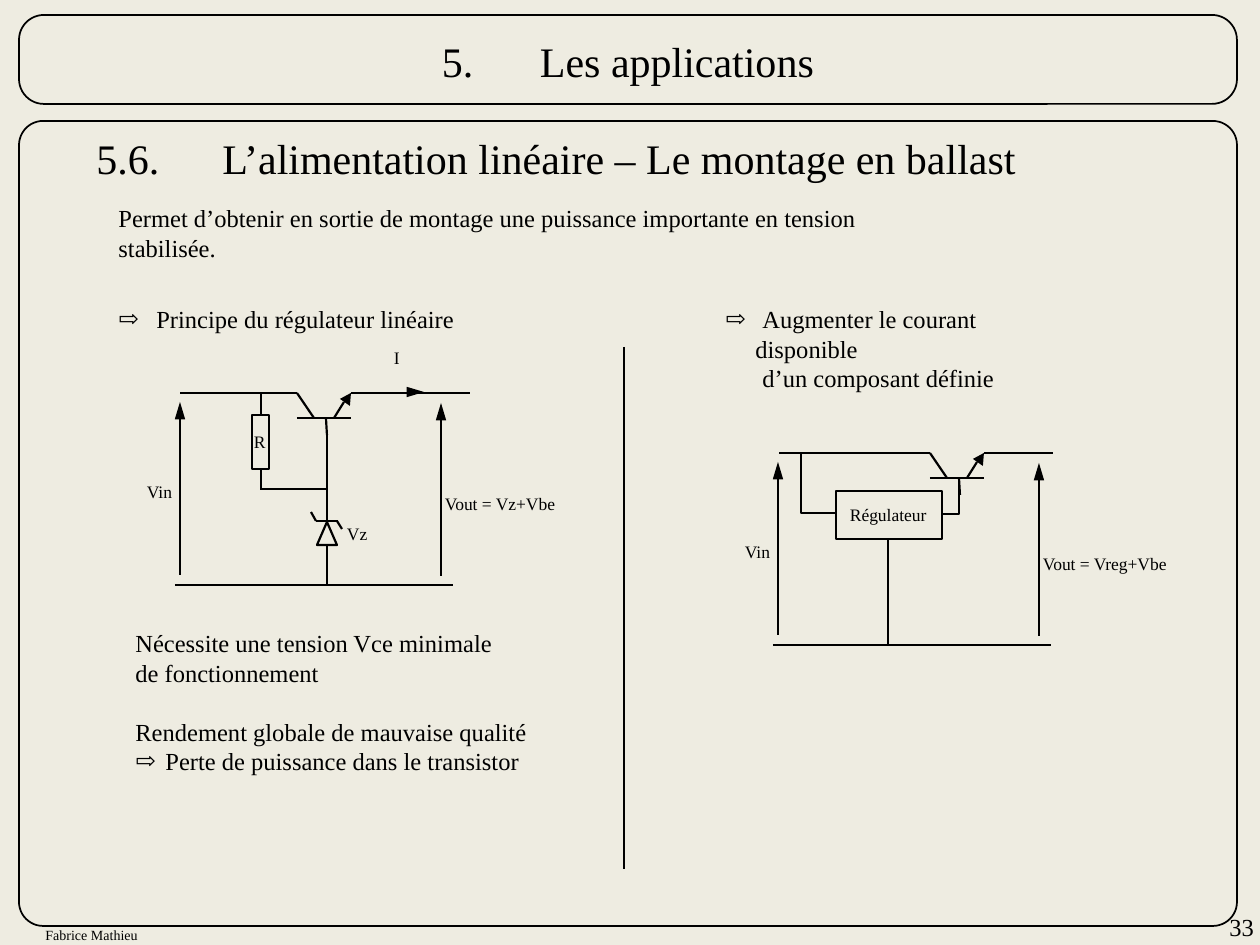
from dataclasses import dataclass

from lxml import etree
from pptx import Presentation
from pptx import util as u
from pptx.dml.color import RGBColor
from pptx.enum import shapes, text
from pptx.oxml.ns import qn


@dataclass(frozen=True)
class Theme:
    paper: RGBColor = RGBColor(0xEE, 0xEC, 0xE1)
    ink: RGBColor = RGBColor(0, 0, 0)
    font: str = "Times New Roman"
    title: int = 24
    body: int = 14
    label: int = 10
    footer: int = 8
    stroke: float = 1.25
    frame: float = 1
    divider: float = 0.75


THEME = Theme()
EMU_PER_PX = 914400 / 126
BULLET = "⇨"


def px(value):
    return u.Emu(round(value * EMU_PER_PX))


def apply(target, values):
    for name, value in values.items():
        setattr(target, name, value)


def style_shape(shape, fill=None, width=THEME.stroke):
    shape.shadow.inherit = False
    if fill is None:
        shape.fill.background()
    else:
        shape.fill.solid()
        shape.fill.fore_color.rgb = fill
    if width:
        shape.line.color.rgb = THEME.ink
        shape.line.width = u.Pt(width)
    else:
        shape.line.fill.background()


def add_box(slide, kind, bounds, fill=None, width=THEME.stroke, corner=None):
    shape = slide.shapes.add_shape(kind, *map(px, bounds))
    style_shape(shape, fill, width)
    if corner is not None:
        shape.adjustments[0] = corner


def add_line(slide, points, width=THEME.stroke, arrow=False):
    connector = slide.shapes.add_connector(
        shapes.MSO_CONNECTOR.STRAIGHT, *map(px, points))
    connector.line.color.rgb = THEME.ink
    connector.line.width = u.Pt(width)
    properties = connector.line._get_or_add_ln()
    if arrow:
        etree.SubElement(properties, qn("a:tailEnd"), type="triangle", w="med", len="lg")
    etree.SubElement(properties.getparent(), qn("a:effectLst"))


def add_outline(slide, points, close=False, fill=None, width=THEME.stroke):
    start, *rest = [tuple(map(px, point)) for point in points]
    builder = slide.shapes.build_freeform(*start, scale=1.0)
    builder.add_line_segments(rest, close=close)
    style_shape(builder.convert_to_shape(), fill, width)


def format_paragraph(paragraph, size, align=None, before=None, hang=0, tab=0):
    apply(paragraph, {"alignment": align, "space_before": before})
    apply(paragraph.font, {"name": THEME.font, "size": u.Pt(size)})
    for run in paragraph.runs:
        apply(run.font, {"name": THEME.font, "size": u.Pt(size)})
        run.font.color.rgb = THEME.ink
    properties = paragraph._p.get_or_add_pPr()
    if hang:
        properties.set("marL", str(px(hang)))
        properties.set("indent", str(-px(hang)))
        etree.SubElement(properties, qn("a:buFont"), typeface=THEME.font)
        etree.SubElement(properties, qn("a:buChar"), char=BULLET)
    if tab:
        tabs = etree.SubElement(properties, qn("a:tabLst"))
        etree.SubElement(tabs, qn("a:tab"), pos=str(px(tab)), algn="l")
    defaults = properties.find(qn("a:defRPr"))
    if defaults is not None:
        properties.append(defaults)


def add_text(slide, bounds, size, *paragraphs, wrap=False, inset=True):
    frame = slide.shapes.add_textbox(*map(px, bounds)).text_frame
    apply(frame, {"word_wrap": wrap, "auto_size": text.MSO_AUTO_SIZE.SHAPE_TO_FIT_TEXT})
    if not inset:
        apply(frame, dict.fromkeys(
            ("margin_left", "margin_top", "margin_right", "margin_bottom"), 0))
    for index, (wording, options) in enumerate(paragraphs):
        paragraph = frame.add_paragraph() if index else frame.paragraphs[0]
        paragraph.add_run().text = wording
        format_paragraph(paragraph, size, **options)


def add_label(slide, x, y, width, wording):
    add_text(slide, (x, y, width, 21), THEME.label, (wording, {}), inset=False)


def add_transistor(slide, x, y):
    for x1, y1, x2, y2 in (
        (0, 25, 54, 25), (37, 25, 47, 9), (29, 25, 30, 42),
        (17, 25, 0, 0), (54, 0, 74, 0), (-21, 0, 0, 0),
    ):
        add_line(slide, (x + x1, y + y1, x + x2, y + y2))
    emitter = [(x + dx, y + dy) for dx, dy in ((53, 13), (54, 0), (43, 6))]
    add_outline(slide, emitter, close=True, fill=THEME.ink, width=0)


def add_terminals(slide, x, y, output, output_width):
    add_line(slide, (x - 5, y + 192, x + 273, y + 192))
    add_line(slide, (x, y + 182, x, y + 9), arrow=True)
    add_line(slide, (x + 261, y + 183, x + 261, y + 10), arrow=True)
    add_label(slide, x - 33, y + 88, 26, "Vin")
    add_label(slide, x + 265, y + 100, output_width, output)


def add_zener_circuit(slide):
    add_terminals(slide, 180, 393, "Vout = Vz+Vbe", 113)
    add_transistor(slide, 297, 393)
    for points in (
        (281, 393, 180, 393), (470, 393, 370, 393),
        (261, 393, 261, 415), (261, 469, 261, 489), (327, 489, 260, 489),
        (327, 431, 327, 489), (327, 584, 327, 484),
        (316, 521, 338, 521), (311, 512, 316, 521), (337, 521, 342, 529),
    ):
        add_line(slide, points)
    add_line(slide, (414, 392, 424, 392), arrow=True)
    add_box(slide, shapes.MSO_SHAPE.RECTANGLE, (252, 415, 17, 54), THEME.paper)
    add_box(slide, shapes.MSO_SHAPE.ISOSCELES_TRIANGLE, (317, 522, 20, 23), THEME.paper)
    add_label(slide, 254, 431, 12, "R")
    add_label(slide, 347, 523, 21, "Vz")
    add_label(slide, 394, 347, 6, "I")


def add_regulator_circuit(slide):
    add_terminals(slide, 778, 453, "Vout = Vreg+Vbe", 128)
    add_transistor(slide, 930, 453)
    for points in (
        (915, 453, 779, 453), (1053, 453, 988, 453), (888, 539, 888, 644),
    ):
        add_line(slide, points)
    add_outline(slide, [(959, 484), (959, 514), (941, 514)])
    add_outline(slide, [(801, 453), (801, 513), (835, 513)])
    add_box(slide, shapes.MSO_SHAPE.RECTANGLE, (836, 491, 106, 48), THEME.paper)
    add_label(slide, 850, 504, 77, "Régulateur")


def add_frames(slide):
    for bounds, corner in (((19, 121, 1218, 805), 0.03), ((19, 15, 1218, 89), 0.28)):
        add_box(slide, shapes.MSO_SHAPE.ROUNDED_RECTANGLE, bounds,
                width=THEME.frame, corner=corner)
    add_text(slide, (33, 920, 122, 30), THEME.footer, ("Fabrice Mathieu", {}))
    add_text(slide, (1215, 912, 39, 30), THEME.body,
             ("33", {"align": text.PP_ALIGN.RIGHT}), wrap=True, inset=False)


def add_wording(slide):
    add_text(slide, (425, 29, 406, 63), THEME.title,
             ("5.\tLes applications", {"align": text.PP_ALIGN.CENTER, "tab": 98}))
    add_text(slide, (84, 126, 953, 64), THEME.title,
             ("5.6.\tL’alimentation linéaire – Le montage en ballast", {"tab": 50}))
    add_text(slide, (106, 197, 764, 72), THEME.body,
             ("Permet d’obtenir en sortie de montage une puissance importante "
              "en tension stabilisée.", {}), wrap=True)
    add_text(slide, (106, 298, 363, 42), THEME.body,
             ("Principe du régulateur linéaire", {"hang": 38}))
    add_text(slide, (713, 298, 376, 72), THEME.body,
             (" \tAugmenter le courant disponible", {"hang": 30, "tab": 37}),
             ("\td’un composant définie", {"tab": 37}), wrap=True)
    add_text(slide, (123, 622, 417, 159), THEME.body,
             ("Nécessite une tension Vce minimale", {}),
             ("de fonctionnement", {}),
             ("Rendement globale de mauvaise qualité", {"before": u.Pt(17)}),
             ("Perte de puissance dans le transistor", {"hang": 30}))


def main():
    presentation = Presentation()
    apply(presentation, {"slide_width": px(1260), "slide_height": px(945)})
    slide = presentation.slides.add_slide(presentation.slide_layouts[6])
    slide.background.fill.solid()
    slide.background.fill.fore_color.rgb = THEME.paper
    add_frames(slide)
    add_wording(slide)
    add_line(slide, (624, 347, 624, 869), width=THEME.divider)
    add_zener_circuit(slide)
    add_regulator_circuit(slide)
    presentation.save("out.pptx")


if __name__ == "__main__":
    main()
